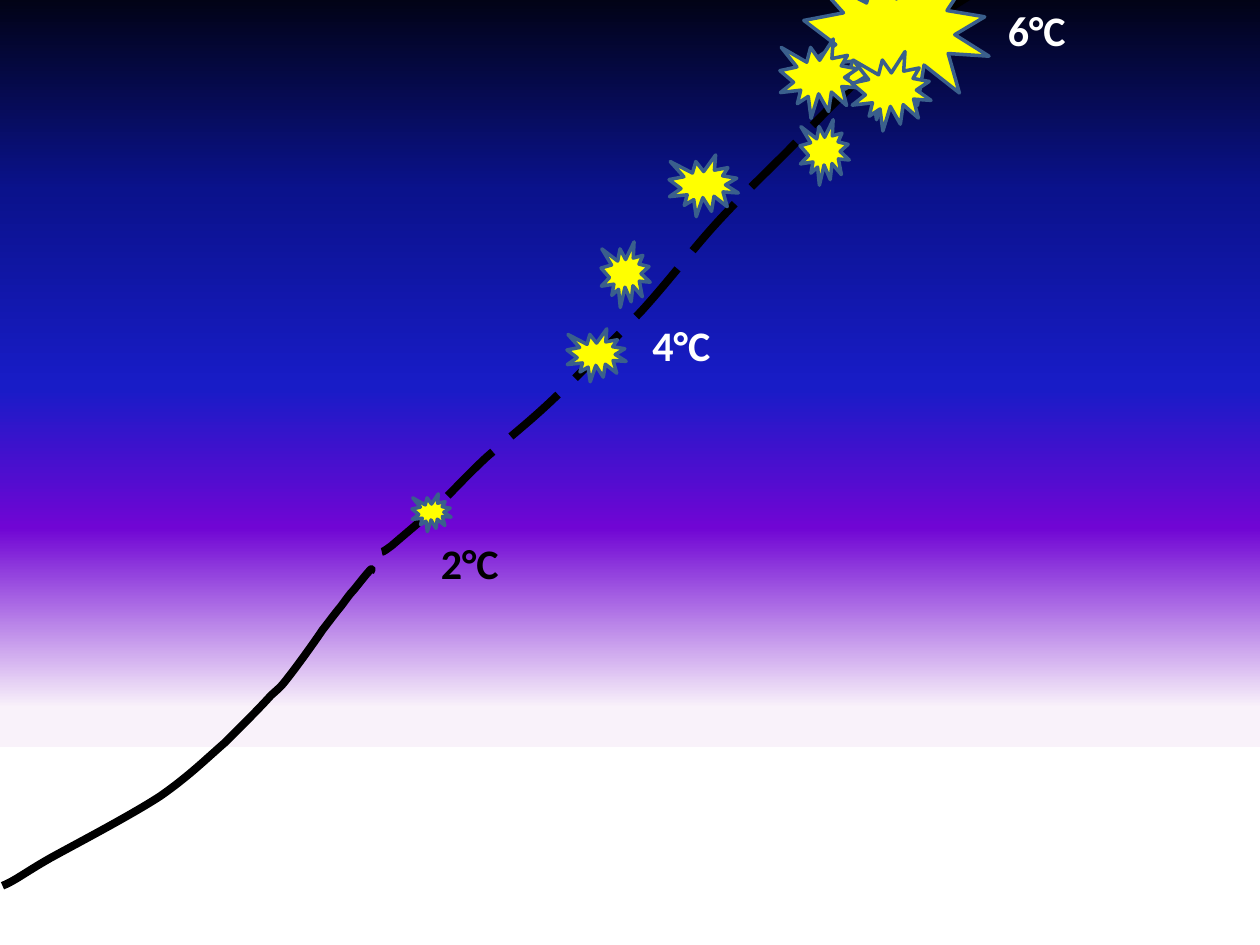
from lxml.etree import SubElement
from pptx import Presentation
from pptx.dml.color import RGBColor
from pptx.enum.dml import MSO_LINE
from pptx.enum.shapes import MSO_SHAPE
from pptx.enum.text import MSO_AUTO_SIZE
from pptx.oxml.ns import qn
from pptx.util import Inches, Pt

BLACK = RGBColor(0x00, 0x00, 0x00)
WHITE = RGBColor(0xFF, 0xFF, 0xFF)
YELLOW = RGBColor(0xFF, 0xFF, 0x00)
STEEL = RGBColor(0x3A, 0x5F, 0x8C)
NAVY = RGBColor(0x0A, 0x12, 0x8C)
BLUE = RGBColor(0x18, 0x1C, 0xC7)
VIOLET = RGBColor(0x70, 0x05, 0xD4)
PALE = RGBColor(0xF9, 0xF2, 0xFA)

COLUMNS = 10  # the slide is 10 square cells wide and 7.5 high
SKY_STOPS = [(0, BLACK), (29, NAVY), (54, BLUE), (72, VIOLET), (95, PALE)]

# Each curve: a start point, then two controls and an end point per segment
PAST_CURVE = [
    (0.02, 7.03),
    (0.12, 6.99), (0.19, 6.93), (0.4, 6.81),
    (0.6, 6.7), (1.04, 6.47), (1.27, 6.32),
    (1.5, 6.16), (1.64, 6.02), (1.79, 5.89),
    (1.93, 5.75), (2.07, 5.61), (2.15, 5.52),
    (2.24, 5.44), (2.23, 5.45), (2.3, 5.36),
    (2.37, 5.27), (2.5, 5.09), (2.56, 5),
    (2.63, 4.91), (2.65, 4.88), (2.7, 4.82),
    (2.74, 4.77), (2.77, 4.72), (2.81, 4.68),
    (2.85, 4.63), (2.99, 4.45), (2.94, 4.54),
]
FUTURE_CURVE = [
    (3.03, 4.38),
    (3.03, 4.38), (3.03, 4.39), (3.11, 4.33),
    (3.19, 4.26), (3.36, 4.12), (3.49, 4),
    (3.61, 3.88), (3.71, 3.77), (3.86, 3.63),
    (4.02, 3.49), (4.19, 3.36), (4.4, 3.16),
    (4.6, 2.97), (4.88, 2.69), (5.09, 2.47),
    (5.3, 2.24), (5.48, 2), (5.67, 1.79),
    (5.86, 1.58), (6.04, 1.41), (6.23, 1.22),
    (6.43, 1.02), (6.62, 0.81), (6.83, 0.62),
    (7.05, 0.43), (7.34, 0.21), (7.52, 0.08),
    (7.71, -0.05), (7.79, -0.09), (7.95, -0.16),
    (8.1, -0.23), (8.48, -0.35), (8.46, -0.34),
]
BURSTS = [
    (6.38, -0.36, 1.47, 1.31),
    (6.19, 0.31, 0.63, 0.63),
    (6.76, 0.41, 0.63, 0.63),
    (4.5, 2.61, 0.47, 0.42),
    (6.35, 0.95, 0.39, 0.52),
    (5.31, 1.23, 0.55, 0.49),
    (3.27, 3.92, 0.31, 0.3),
    (4.77, 1.92, 0.39, 0.52),
]
LABELS = [
    ("2°C", 3.4, 4.22, BLACK),
    ("6°C", 7.9, -0.01, WHITE),
    ("4°C", 5.08, 2.49, WHITE),
]


class WarmingSlide:
    font = "Calibri"
    label_size = Pt(24)
    curve_width = Pt(4.5)
    burst_outline = Pt(2)

    def __init__(self, presentation):
        self.cell = presentation.slide_width / COLUMNS
        self.slide = presentation.slides.add_slide(presentation.slide_layouts[6])

    def cells(self, *lengths):
        return [round(length * self.cell) for length in lengths]

    def preset(self, kind, box):
        shape = self.slide.shapes.add_shape(kind, *self.cells(*box))
        shape.shadow.inherit = False
        return shape

    def sky(self, box, stops):
        shape = self.preset(MSO_SHAPE.RECTANGLE, box)
        shape.line.fill.background()
        shape.fill.gradient()
        shape.fill.gradient_angle = 270  # counted counter-clockwise: downwards
        stop_list = next(shape.element.iter(qn("a:gsLst")))
        for old_stop in list(stop_list):
            stop_list.remove(old_stop)
        for percent, color in stops:
            stop = SubElement(stop_list, qn("a:gs"), pos=str(percent * 1000))
            SubElement(stop, qn("a:srgbClr"), val=str(color))

    def curve(self, points, dash=None):
        start, *others = [self.cells(*point) for point in points]
        builder = self.slide.shapes.build_freeform(*start)
        builder.add_line_segments(others, close=False)
        shape = builder.convert_to_shape()
        shape.shadow.inherit = False
        shape.fill.background()
        shape.line.color.rgb = BLACK
        shape.line.width = self.curve_width
        if dash:
            shape.line.dash_style = dash
        # Join every three straight steps into one cubic Bézier segment
        outline = next(shape.element.iter(qn("a:path")))
        steps = outline.findall(qn("a:lnTo"))
        for first in range(0, len(steps), 3):
            bezier = SubElement(outline, qn("a:cubicBezTo"))
            for step in steps[first:first + 3]:
                bezier.append(step[0])
                outline.remove(step)

    def burst(self, box):
        shape = self.preset(MSO_SHAPE.EXPLOSION1, box)
        shape.fill.solid()
        shape.fill.fore_color.rgb = YELLOW
        shape.line.color.rgb = STEEL
        shape.line.width = self.burst_outline

    def label(self, text, left, top, color):
        box = self.slide.shapes.add_textbox(*self.cells(left, top, 0.89, 0.5))
        frame = box.text_frame
        frame.word_wrap = True
        frame.auto_size = MSO_AUTO_SIZE.SHAPE_TO_FIT_TEXT
        run = frame.paragraphs[0].add_run()
        run.text = text
        run.font.name = self.font
        run.font.size = self.label_size
        run.font.bold = True
        run.font.color.rgb = color


def main():
    presentation = Presentation()
    presentation.slide_width = Inches(10)
    presentation.slide_height = Inches(7.5)
    slide = WarmingSlide(presentation)

    # Sky
    slide.sky((-0.09, -0.29, 10.39, 6.22), SKY_STOPS)

    # Temperature path: solid so far, dashed ahead
    slide.curve(PAST_CURVE)
    slide.curve(FUTURE_CURVE, MSO_LINE.LONG_DASH)

    # Bursts along the path
    for box in BURSTS:
        slide.burst(box)

    # Temperature labels
    for label in LABELS:
        slide.label(*label)

    presentation.save("out.pptx")


if __name__ == "__main__":
    main()
